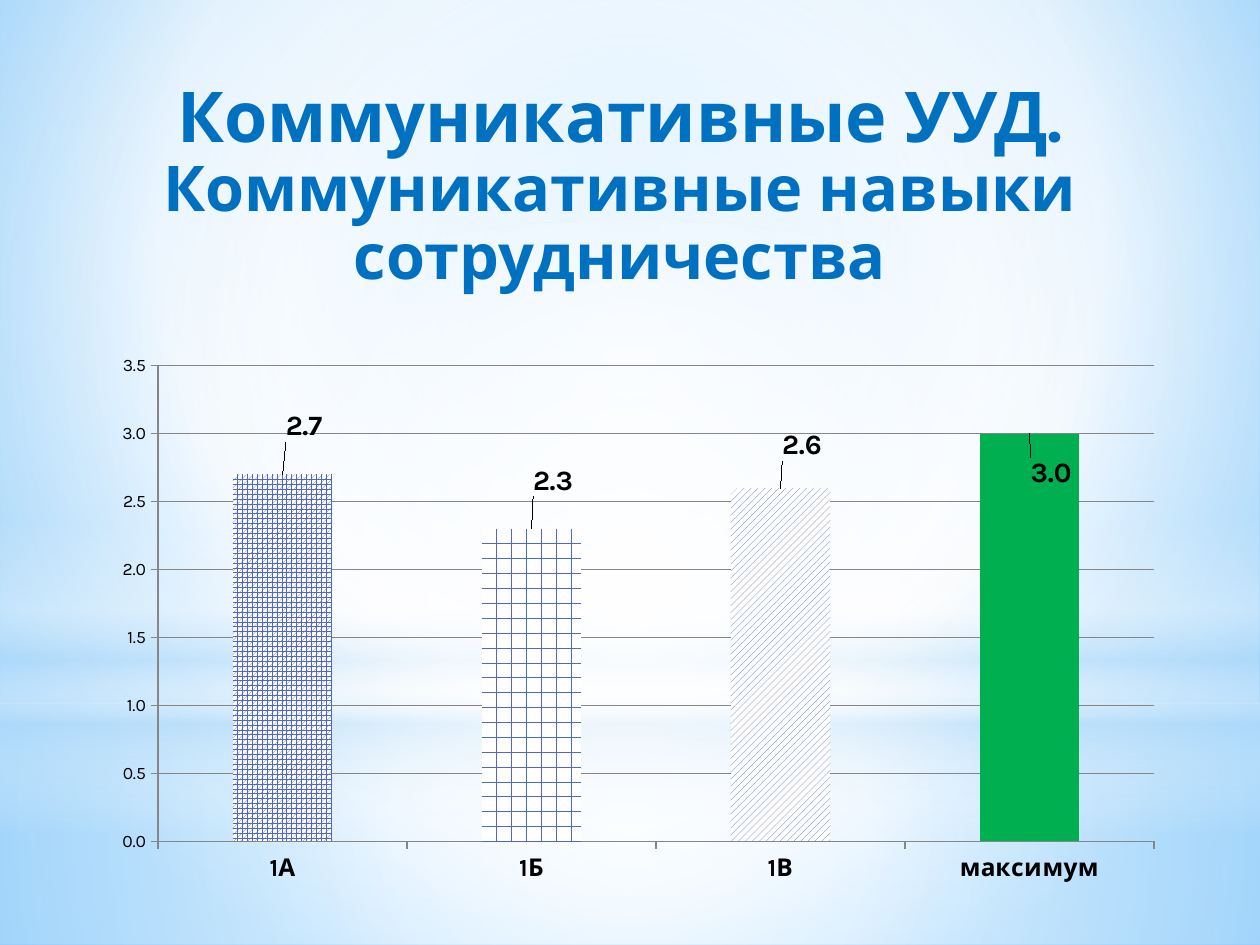
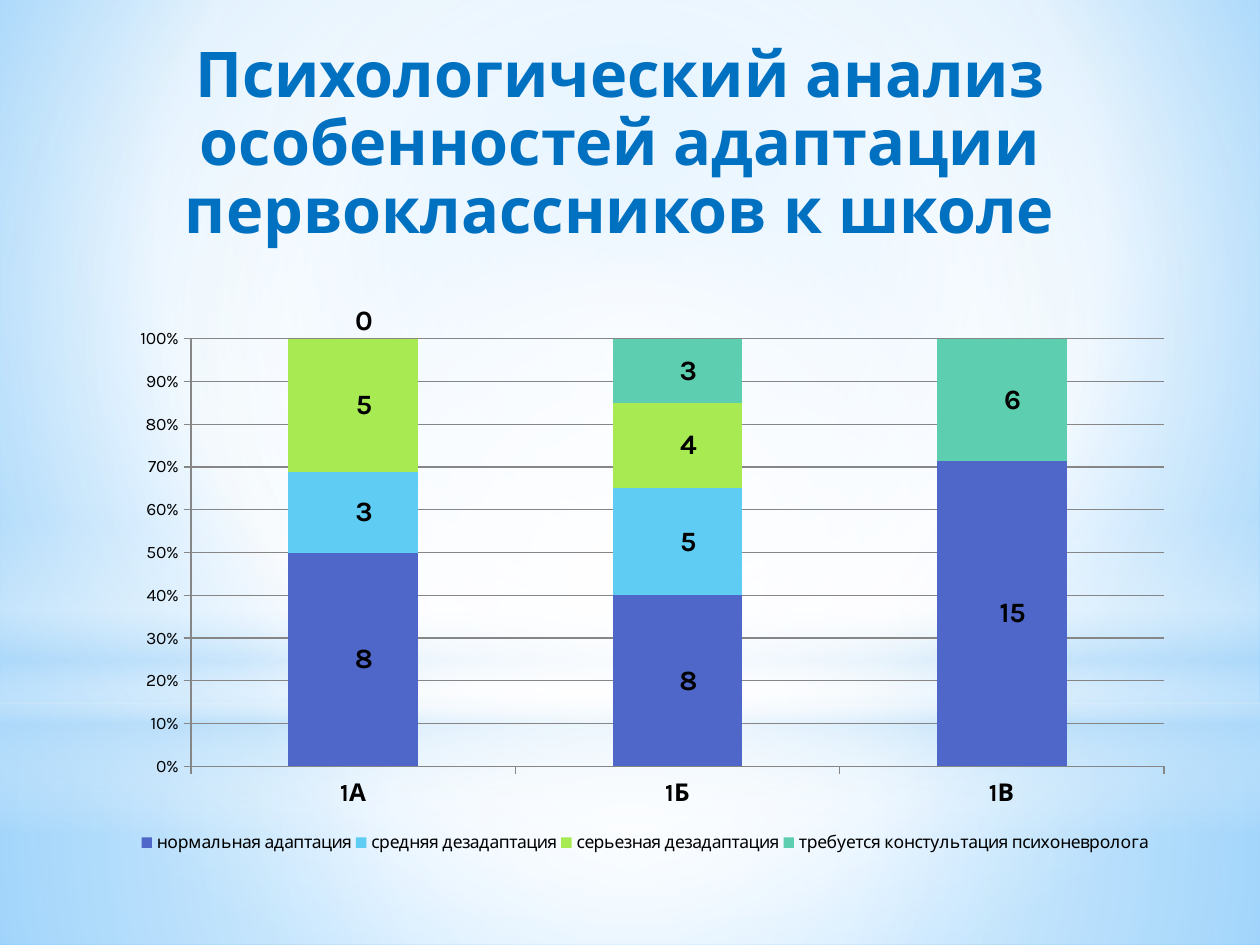
from lxml import etree
from pptx import Presentation
from pptx.chart.data import CategoryChartData
from pptx.dml.color import RGBColor
from pptx.enum.chart import XL_CHART_TYPE, XL_LABEL_POSITION, XL_LEGEND_POSITION, XL_TICK_MARK
from pptx.enum.dml import MSO_PATTERN
from pptx.enum.shapes import MSO_SHAPE
from pptx.enum.text import MSO_ANCHOR, PP_ALIGN
from pptx.oxml.ns import qn
from pptx.util import Inches, Pt

CLUSTERED = XL_CHART_TYPE.COLUMN_CLUSTERED
STACKED_100 = XL_CHART_TYPE.COLUMN_STACKED_100
OUTSIDE_END = XL_LABEL_POSITION.OUTSIDE_END
CENTER_LABEL = XL_LABEL_POSITION.CENTER
LEGEND_BOTTOM = XL_LEGEND_POSITION.BOTTOM
TICK_OUT = XL_TICK_MARK.OUTSIDE
TICK_NONE = XL_TICK_MARK.NONE
SPHERE = MSO_PATTERN.SPHERE
BRICK = MSO_PATTERN.HORIZONTAL_BRICK
DIAGONAL = MSO_PATTERN.WIDE_UPWARD_DIAGONAL
RECT = MSO_SHAPE.RECTANGLE
OVAL = MSO_SHAPE.OVAL
TOP = MSO_ANCHOR.TOP
CENTER = PP_ALIGN.CENTER

FONT = "Karla"
TITLE_BLUE = RGBColor(0x00, 0x70, 0xC0)
BLACK = RGBColor(0x00, 0x00, 0x00)
WHITE = RGBColor(0xFF, 0xFF, 0xFF)
GRID_GRAY = RGBColor(0x86, 0x86, 0x86)
SKY = RGBColor(0x9E, 0xD5, 0xFF)
DEEP_SKY = RGBColor(0x5B, 0xB9, 0xFF)
PALE_BLUE = RGBColor(0xB4, 0xDC, 0xFA)
INDIGO = RGBColor(0x4E, 0x67, 0xC8)
CYAN = RGBColor(0x5E, 0xCC, 0xF3)
LIME = RGBColor(0xA7, 0xEA, 0x52)
TEAL = RGBColor(0x5D, 0xCE, 0xAF)
GREEN = RGBColor(0x00, 0xB0, 0x50)

CENTERED = (50, 50, 50, 50)
BACKGROUND_STOPS = [(0, SKY, 100), (60, WHITE, 100), (100, DEEP_SKY, 100)]
GLOWS = [
    (RECT, (0, 5.58, 10, 1.92), CENTERED,
     [(0, WHITE, 91), (37, WHITE, 76), (100, PALE_BLUE, 79)]),
    (RECT, (0, 0, 10, 5.58), CENTERED,
     [(0, WHITE, 89), (48, WHITE, 62), (100, PALE_BLUE, 79)]),
    (RECT, (0, 4.12, 10, 2.5), None,
     [(0, WHITE, 0), (29, WHITE, 30), (45, PALE_BLUE, 40),
      (55, WHITE, 26), (65, PALE_BLUE, 60), (100, WHITE, 0)]),
    (OVAL, (0, 1.75, 10, 5.58), CENTERED, [(0, WHITE, 100), (56, WHITE, 0)]),
]


def add_node(parent, tag, **attrs):
    return etree.SubElement(parent, qn(tag), {k: str(v) for k, v in attrs.items()})


def set_gradient(element, stops, focus):
    solid = element.find(".//" + qn("a:solidFill"))
    grad = etree.Element(qn("a:gradFill"), rotWithShape="1")
    gs_list = add_node(grad, "a:gsLst")
    for position, color, opacity in stops:
        gs = add_node(gs_list, "a:gs", pos=position * 1000)
        clr = add_node(gs, "a:srgbClr", val=color)
        if opacity < 100:
            add_node(clr, "a:alpha", val=opacity * 1000)
    if focus:
        circle = add_node(grad, "a:path", path="circle")
        add_node(circle, "a:fillToRect", **{side: v * 1000 for side, v in zip("ltrb", focus)})
    else:
        add_node(grad, "a:lin", ang=90 * 60000, scaled=0)
    solid.getparent().replace(solid, grad)


def set_layout(parent, index, target=None, **values):
    for old in parent.findall(qn("c:layout")):
        parent.remove(old)
    layout = etree.Element(qn("c:layout"))
    manual = add_node(layout, "c:manualLayout")
    if target:
        add_node(manual, "c:layoutTarget", val=target)
    if "w" in values:
        add_node(manual, "c:xMode", val="edge")
        add_node(manual, "c:yMode", val="edge")
    for name, value in values.items():
        add_node(manual, "c:" + name, val=value)
    parent.insert(index, layout)


def style_font(font, size, bold=False, color=BLACK):
    font.name = FONT
    font.size = Pt(size)
    font.bold = bold
    font.color.rgb = color


def add_backdrop(s):
    s.background.fill.solid()
    set_gradient(s.element, BACKGROUND_STOPS, (20, 10, 20, 60))
    for kind, box, focus, stops in GLOWS:
        sp = s.shapes.add_shape(kind, *map(Inches, box))
        sp.shadow.inherit = False
        sp.line.fill.background()
        sp.fill.solid()
        set_gradient(sp.element, stops, focus)


def add_title(s, box, text, sizes):
    tf = s.shapes.add_textbox(*map(Inches, box)).text_frame
    tf.word_wrap = True
    tf.vertical_anchor = TOP
    tf.text = text
    p = tf.paragraphs[0]
    p.alignment = CENTER
    p.line_spacing = 0.9
    for r, size in zip(p.runs, sizes):
        style_font(r.font, size, True, TITLE_BLUE)


def add_column_chart(s, box, kind, categories, series, plot_box, value_format, axis_format):
    data = CategoryChartData(number_format=value_format)
    data.categories = categories
    for name, values, _ in series:
        data.add_series(name, values)
    chart = s.shapes.add_chart(kind, *map(Inches, box), data).chart
    chart.has_title = False
    chart.has_legend = False
    style_font(chart.font, 10)
    plot = chart.plots[0]
    plot.gap_width = 150
    plot.vary_by_categories = False
    for ser, (_, _, color) in zip(plot.series, series):
        ser.format.fill.solid()
        ser.format.fill.fore_color.rgb = color
    for axis in (chart.category_axis, chart.value_axis):
        axis.major_tick_mark = TICK_OUT
        axis.minor_tick_mark = TICK_NONE
        axis.format.line.color.rgb = GRID_GRAY
    style_font(chart.category_axis.tick_labels.font, 14, True)
    value_axis = chart.value_axis
    value_axis.major_gridlines.format.line.color.rgb = GRID_GRAY
    value_axis.tick_labels.number_format = axis_format
    value_axis.tick_labels.number_format_is_linked = False
    value_axis.minimum_scale = 0
    plot_area = chart.element.find(".//" + qn("c:plotArea"))
    set_layout(plot_area, 0, "inner", **dict(zip("xywh", plot_box)))
    return chart


def label_series(ser, number_format, position, offsets):
    labels = ser.data_labels
    labels.show_value = False
    labels.number_format = number_format
    labels.number_format_is_linked = False
    for i, (dx, dy) in offsets.items():
        label = ser.points[i].data_label
        style_font(label.font, 16, True)
        label.position = position
    for node, (dx, dy) in zip(ser.data_labels._element.findall(qn("c:dLbl")), offsets.values()):
        set_layout(node, 1, x=dx, y=dy)


def build_skills_slide(s):
    add_backdrop(s)
    add_title(s, (1.06, 0.6, 7.72, 1.25),
              "Коммуникативные УУД.\vКоммуникативные навыки сотрудничества", (40, 36))
    chart = add_column_chart(
        s, (0.83, 2.73, 8.5, 4.34), CLUSTERED, ["1А", "1Б", "1В", "максимум"],
        [("Series 1", (2.7, 2.3, 2.6, 3), INDIGO)], (0.05, 0.04, 0.93, 0.87), "0.0", "0.0")
    chart.value_axis.maximum_scale = 3.5
    chart.value_axis.major_unit = 0.5
    ser = chart.plots[0].series[0]
    for i, pattern in enumerate((SPHERE, BRICK, DIAGONAL)):
        fill = ser.points[i].format.fill
        fill.patterned()
        fill.pattern = pattern
        fill.fore_color.rgb = INDIGO
        fill.back_color.rgb = WHITE
    fill = ser.points[3].format.fill
    fill.solid()
    fill.fore_color.rgb = GREEN
    rises = (-0.05, -0.05, -0.04, 0.11)
    label_series(ser, "0.0", OUTSIDE_END, {i: (0.02, dy) for i, dy in enumerate(rises)})


def build_adaptation_slide(s):
    add_backdrop(s)
    add_title(s, (1.06, 0.29, 7.72, 1.33),
              "Психологический анализ особенностей адаптации первоклассников к школе", (36,))
    series = [
        ("нормальная адаптация", (8, 8, 15), INDIGO),
        ("средняя дезадаптация", (3, 5, 0), CYAN),
        ("серьезная дезадаптация", (5, 4, 0), LIME),
        ("требуется констультация психоневролога", (0, 3, 6), TEAL),
    ]
    chart = add_column_chart(
        s, (0.83, 2.41, 8.58, 4.65), STACKED_100, ["1А", "1Б", "1В"],
        series, (0.08, 0.06, 0.9, 0.73), "General", "0%")
    chart.plots[0].overlap = 100
    chart.value_axis.maximum_scale = 1
    chart.value_axis.major_unit = 0.1
    for ser, (_, values, _) in zip(chart.plots[0].series, series):
        offsets = {i: (0.01, 0 if value else -0.03)
                   for i, value in enumerate(values) if value or i == 0}
        label_series(ser, "#,##0", CENTER_LABEL, offsets)
    chart.has_legend = True
    legend = chart.legend
    legend.position = LEGEND_BOTTOM
    legend.include_in_layout = False
    style_font(legend.font, 10)
    set_layout(legend._element, 1, x=0.03, y=0.89, w=0.94, h=0.06)


def main():
    prs = Presentation()
    prs.slide_width = Inches(10)
    prs.slide_height = Inches(7.5)
    for build in (build_skills_slide, build_adaptation_slide):
        build(prs.slides.add_slide(prs.slide_layouts[6]))
    prs.save("out.pptx")


if __name__ == "__main__":
    main()
